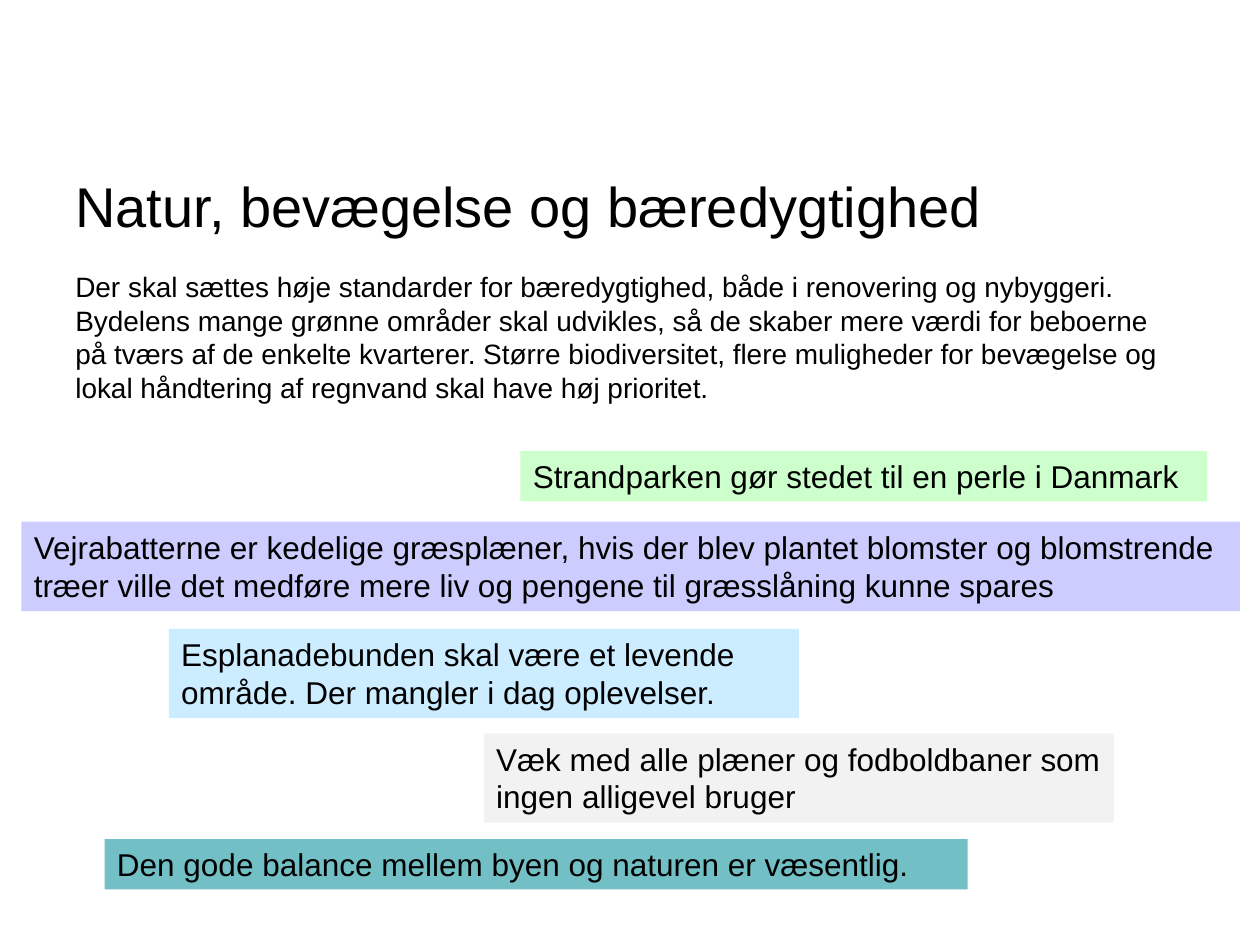
from pptx import Presentation
from pptx import util as u
from pptx.dml.color import RGBColor
from pptx.enum import shapes, text

BLACK = RGBColor(0x00, 0x00, 0x00)
GREEN = RGBColor(0xCC, 0xFF, 0xCC)
LILAC = RGBColor(0xCC, 0xCC, 0xFF)
SKY = RGBColor(0xCC, 0xEC, 0xFF)
GREY = RGBColor(0xF2, 0xF2, 0xF2)
TEAL = RGBColor(0x72, 0xBF, 0xC5)

prs = Presentation()
prs.slide_width, prs.slide_height = u.Inches(10), u.Inches(7.5)
s = prs.slides.add_slide(prs.slide_layouts[6])

# Grid: 100 columns across the slide, 75 rows down
COL, ROW = prs.slide_width / 100, prs.slide_height / 75
MARGIN, BODY_W = 5, 90


def box(x, y, w, h):
    return [round(v) for v in (x * COL, y * ROW, w * COL, h * ROW)]


def write(sp, words, size, anchor=text.MSO_ANCHOR.TOP):
    tf = sp.text_frame
    tf.word_wrap = True
    tf.vertical_anchor = anchor
    p = tf.paragraphs[0]
    p.alignment = text.PP_ALIGN.LEFT
    r = p.add_run()
    r.text = words
    for name, value in {"name": "Arial", "size": u.Pt(size)}.items():
        setattr(r.font, name, value)
    r.font.color.rgb = BLACK


# Title and introduction
sp = s.shapes.add_textbox(*box(MARGIN, 12.3, BODY_W, 7.9))
write(sp, "Natur, bevægelse og bæredygtighed", 32, text.MSO_ANCHOR.MIDDLE)
sp = s.shapes.add_textbox(*box(MARGIN, 20.9, BODY_W, 18.1))
write(sp, "Der skal sættes høje standarder for bæredygtighed, både i renovering "
          "og nybyggeri. Bydelens mange grønne områder skal udvikles, så de skaber "
          "mere værdi for beboerne på tværs af de enkelte kvarterer. Større "
          "biodiversitet, flere muligheder for bevægelse og lokal håndtering af "
          "regnvand skal have høj prioritet.", 16)

# Citizens' quotes: left, top, width, lines of text, fill, words
ONE, TWO = 4, 7.1
quotes = [
    (41.3, 35.8, 54.5, ONE, GREEN,
     "Strandparken gør stedet til en perle i Danmark"),
    (1.7, 41.4, 96.7, TWO, LILAC,
     "Vejrabatterne er kedelige græsplæner, hvis der blev plantet blomster og "
     "blomstrende træer ville det medføre mere liv og pengene til græsslåning "
     "kunne spares"),
    (13.4, 49.9, 50, TWO, SKY,
     "Esplanadebunden skal være et levende område. Der mangler i dag oplevelser."),
    (38.4, 58.2, 50, TWO, GREY,
     "Væk med alle plæner og fodboldbaner som ingen alligevel bruger"),
    (8.3, 66.6, 68.5, ONE, TEAL,
     "Den gode balance mellem byen og naturen er væsentlig."),
]
for x, y, w, h, fill, words in quotes:
    sp = s.shapes.add_shape(shapes.MSO_SHAPE.RECTANGLE, *box(x, y, w, h))
    sp.shadow.inherit = False
    sp.fill.solid()
    sp.fill.fore_color.rgb = fill
    sp.line.fill.background()
    write(sp, words, 18)
    sp.text_frame.auto_size = text.MSO_AUTO_SIZE.SHAPE_TO_FIT_TEXT

prs.save("out.pptx")
